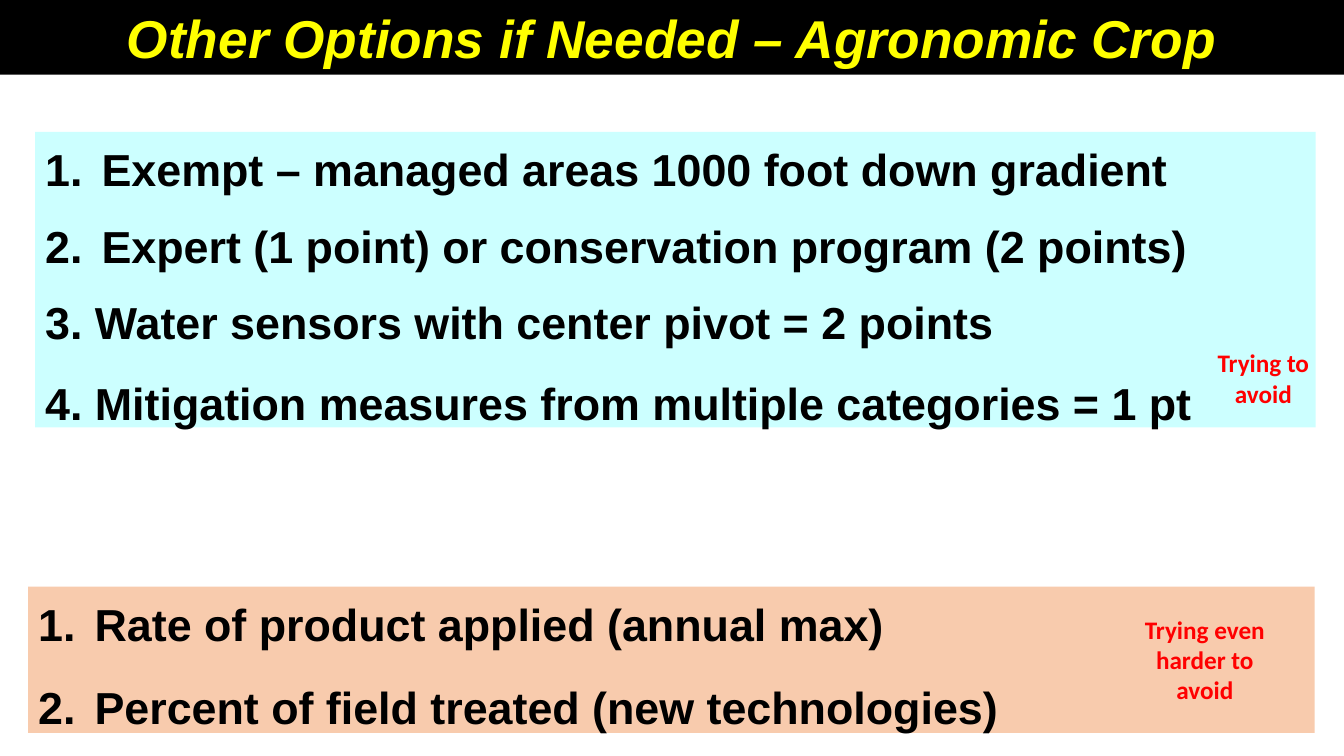
from pptx import Presentation
from pptx.dml.color import RGBColor
from pptx.enum.shapes import MSO_SHAPE as SHAPE
from pptx.enum.text import MSO_ANCHOR as ANCHOR, PP_ALIGN as ALIGN
from pptx.util import Inches, Pt
from lxml import etree

NS = "http://schemas.openxmlformats.org/drawingml/2006/main"
TITLE = {"name": "Arial", "size": Pt(38), "bold": True, "italic": True}
ITEM = {"name": "Arial", "size": Pt(32), "bold": True}
NOTE = {"name": "Calibri", "size": Pt(18), "bold": True}


def rgb(value):
    return RGBColor.from_string(value)


def add_text(p, text, style, color):
    r = p.add_run()
    r.text = text
    for name, value in style.items():
        setattr(r.font, name, value)
    r.font.color.rgb = rgb(color)


def add_number(p):
    pPr = p._p.get_or_add_pPr()
    pPr.set("marL", str(Inches(0.56)))
    pPr.set("indent", str(-Inches(0.56)))
    etree.SubElement(pPr, f"{{{NS}}}buAutoNum", type="arabicPeriod")


def add_panel(s, box, fill):
    sp = s.shapes.add_shape(SHAPE.RECTANGLE, *map(Inches, box))
    sp.shadow.inherit = False
    sp.fill.solid()
    sp.fill.fore_color.rgb = rgb(fill)
    sp.line.fill.background()
    tf = sp.text_frame
    tf.word_wrap = True
    return tf


def add_title(s, text):
    tf = add_panel(s, (0, 0, 13.33, 0.74), "000000")
    tf.vertical_anchor = ANCHOR.MIDDLE
    p = tf.paragraphs[0]
    p.alignment = ALIGN.CENTER
    add_text(p, text, TITLE, "FFFF00")


def add_list(s, box, fill, items):
    tf = add_panel(s, box, fill)
    tf.vertical_anchor = ANCHOR.TOP
    tf.margin_top = Inches(0.1)
    for i, (text, gap, numbered) in enumerate(items):
        p = tf.add_paragraph() if i else tf.paragraphs[0]
        p.alignment = ALIGN.LEFT
        if gap:
            p.space_before = Pt(gap)
        if numbered:
            add_number(p)
        add_text(p, text, ITEM, "000000")


def add_note(s, box, text):
    tf = s.shapes.add_textbox(*map(Inches, box)).text_frame
    tf.word_wrap = True
    p = tf.paragraphs[0]
    p.alignment = ALIGN.CENTER
    add_text(p, text, NOTE, "FF0000")


def main():
    prs = Presentation()
    prs.slide_width, prs.slide_height = Inches(13.33), Inches(7.5)
    s = prs.slides.add_slide(prs.slide_layouts[6])
    add_title(s, "Other Options if Needed – Agronomic Crop")
    add_list(s, (0.28, 5.82, 12.76, 1.45), "F8CBAD", [
        ("Rate of product applied (annual max)", 0, True),
        ("Percent of field treated (new technologies)", 21, True),
    ])
    add_list(s, (0.35, 1.31, 12.7, 2.93), "CCFFFF", [
        ("Exempt – managed areas 1000 foot down gradient", 0, True),
        ("Expert (1 point) or conservation program (2 points)", 16, True),
        ("3. Water sensors with center pivot = 2 points", 16, False),
        ("4. Mitigation measures from multiple categories = 1 pt", 20, False),
    ])
    add_note(s, (11.15, 6.04, 1.6, 1.01), "Trying even harder to avoid")
    add_note(s, (11.73, 3.4, 1.6, 0.71), "Trying to avoid")
    prs.save("out.pptx")


if __name__ == "__main__":
    main()
